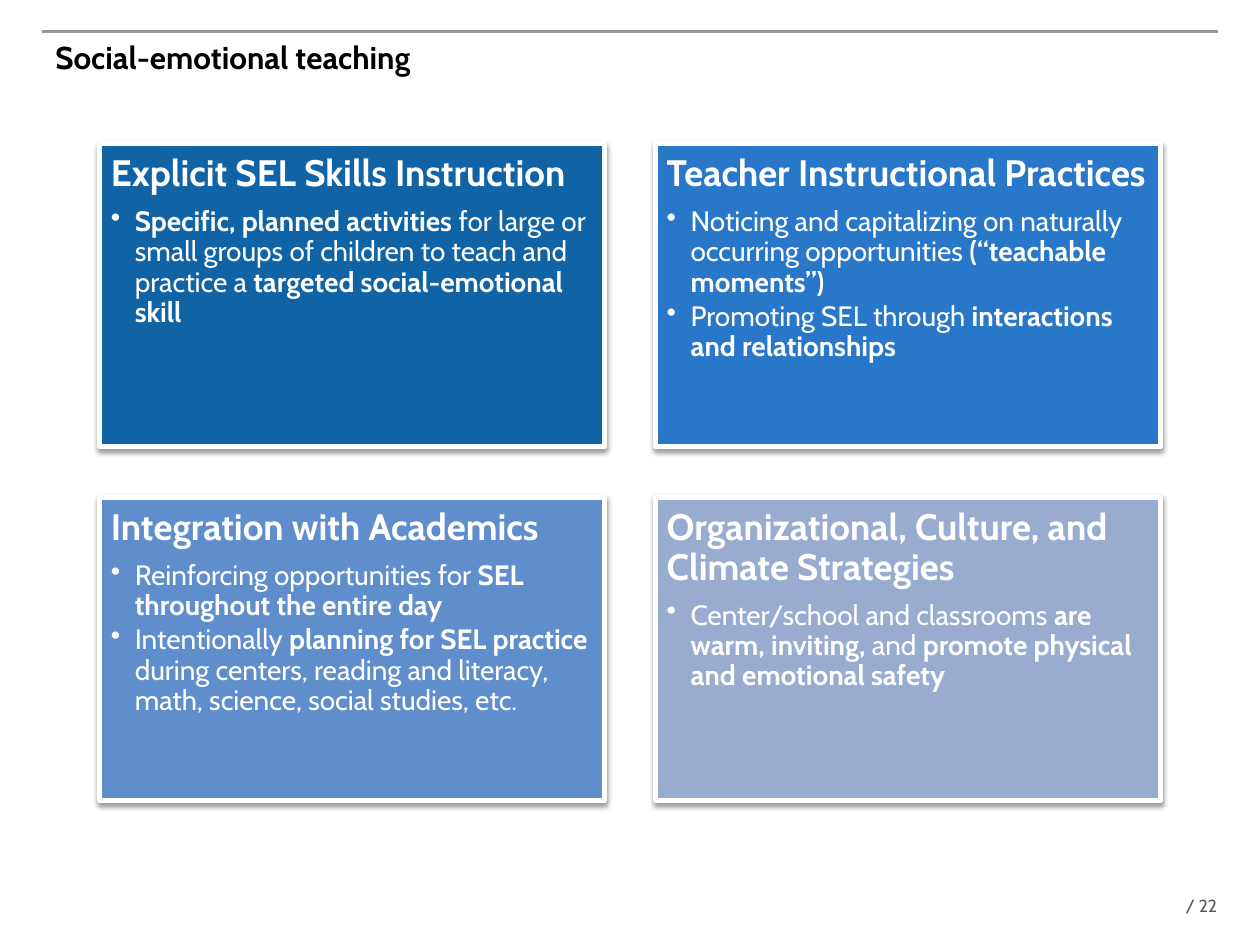
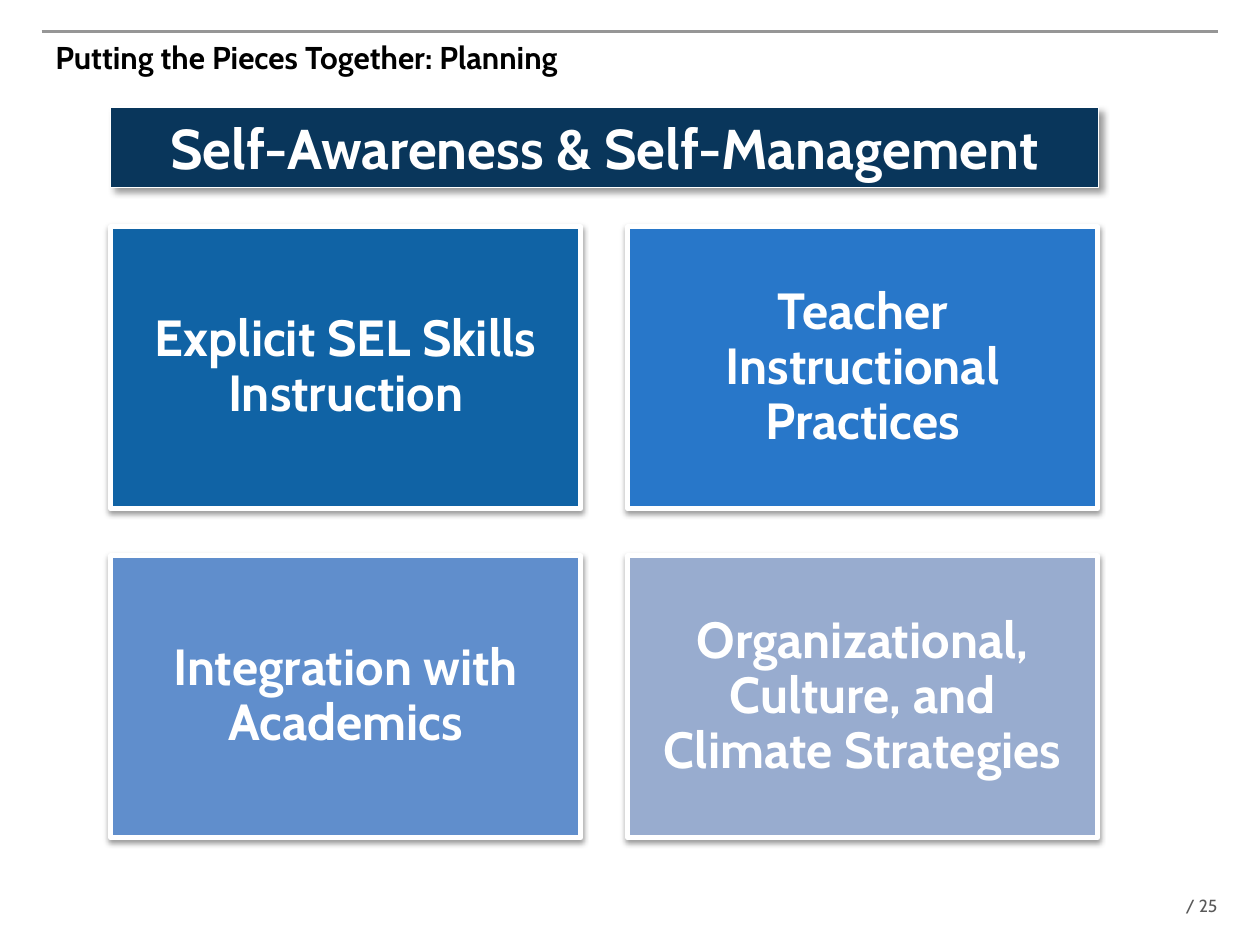
"""Build two slides on social-emotional teaching: four strategies in detail, then as a planning overview."""
from lxml.etree import SubElement
from pptx import Presentation
from pptx.dml.color import RGBColor
from pptx.enum.shapes import MSO_CONNECTOR, MSO_SHAPE
from pptx.enum.text import MSO_ANCHOR as Anchor, PP_ALIGN as Align
from pptx.oxml import parse_xml
from pptx.oxml.ns import nsdecls, qn
from pptx.util import Emu, Inches, Pt

FONT = "Cabin"
WHITE, BLACK, RULE_GRAY, FOOTER_GRAY, NAVY = "FFFFFF", "000000", "969696", "595959", "09365B"
CARD_SHADOW = (38, 3.1, 1.6, 90)
BANNER_SHADOW = (40, 4, 3, 45)
rgb = RGBColor.from_string

STRATEGIES = [
    ("Explicit SEL Skills Instruction", "1063A5", [
        "*Specific, planned activities *for large or small groups of children to teach and "
        "practice a *targeted social-emotional skill*"]),
    ("Teacher Instructional Practices", "2877C9", [
        "Noticing and capitalizing on naturally occurring opportunities *(“teachable moments”)*",
        "Promoting SEL through *interactions and relationships*"]),
    ("Integration with Academics", "608ECC", [
        "Reinforcing opportunities for *SEL throughout the entire day*",
        "Intentionally *planning for SEL practice *during centers, reading and literacy, "
        "math, science, social studies, etc."]),
    ("Organizational, Culture, and Climate Strategies", "98ACCF", [
        "Center/school and classrooms *are warm, inviting,* and "
        "*promote physical and emotional safety*"]),
]

SLIDES = [
    {"title": "Social-emotional teaching", "footer": "/ 22", "banner": None,
     "left": 0.79, "top": 1.14, "width": 4.01, "inset": 0.09, "size": 21,
     "anchor": Anchor.TOP, "align": Align.LEFT, "details": True},
    {"title": "Putting the Pieces Together: Planning", "footer": "/ 25",
     "banner": "Self-Awareness & Self-Management",
     "left": 0.88, "top": 1.8, "width": 3.73, "inset": 0.12, "size": 29,
     "anchor": Anchor.MIDDLE, "align": Align.CENTER, "details": False},
]


def write(paragraph, text, size, color, bold=None):
    """Fill a paragraph; without a given weight, text between asterisks is bold."""
    paragraph.font.name = FONT
    paragraph.font.size = Pt(size)
    paragraph.font.color.rgb = rgb(color)
    paragraph.font.bold = bold
    for index, part in enumerate([text] if bold is not None else text.split("*")):
        if part:
            span = paragraph.add_run()
            span.text = part
            if bold is None:
                span.font.bold = index % 2 == 1


def add_panel(page, left, top, width, height, fill, border, shadow):
    """Add a filled rectangle with a white border and a soft shadow."""
    panel = page.shapes.add_shape(
        MSO_SHAPE.RECTANGLE, Inches(left), Inches(top), Inches(width), Inches(height))
    panel.fill.solid()
    panel.fill.fore_color.rgb = rgb(fill)
    panel.line.color.rgb = rgb(WHITE)
    panel.line.width = Pt(border)
    panel.shadow.inherit = False
    alpha, blur, distance, angle = shadow
    panel._element.spPr.find(qn("a:effectLst")).append(parse_xml(
        f'<a:outerShdw {nsdecls("a")} blurRad="{Pt(blur)}" dist="{Pt(distance)}" '
        f'dir="{angle * 60000}" rotWithShape="0"><a:srgbClr val="{BLACK}">'
        f'<a:alpha val="{alpha * 1000}"/></a:srgbClr></a:outerShdw>'))
    panel.text_frame.word_wrap = True
    return panel


deck = Presentation()
deck.slide_width, deck.slide_height = Inches(10), Inches(7.5)

for content in SLIDES:
    page = deck.slides.add_slide(deck.slide_layouts[6])

    footer = page.shapes.add_textbox(Inches(9.41), Inches(7.1), Inches(0.55), Inches(0.17)).text_frame
    footer.margin_left = footer.margin_right = footer.margin_top = footer.margin_bottom = Emu(0)
    write(footer.paragraphs[0], content["footer"], 10, FOOTER_GRAY, False)

    rule = page.shapes.add_connector(
        MSO_CONNECTOR.STRAIGHT, Inches(0.33), Inches(0.25), Inches(9.67), Inches(0.25))
    rule.line.color.rgb = rgb(RULE_GRAY)
    rule.line.width = Pt(2)
    SubElement(rule._element.spPr, qn("a:effectLst"))

    title = page.shapes.add_textbox(Inches(0.34), Inches(0.25), Inches(9.32), Inches(0.92)).text_frame
    title.word_wrap = True
    write(title.paragraphs[0], content["title"], 18, BLACK, True)

    width, inset = content["width"], content["inset"]
    for index, (heading, fill, details) in enumerate(STRATEGIES):
        row, column = divmod(index, 2)
        card = add_panel(page, content["left"] + column * 1.1 * width,
                         content["top"] + row * 0.7 * width,
                         width, 0.6 * width, fill, 3, CARD_SHADOW)
        box = card.text_frame
        box.margin_left = box.margin_right = box.margin_top = box.margin_bottom = Inches(inset)
        box.vertical_anchor = content["anchor"]
        para = box.paragraphs[0]
        para.alignment = content["align"]
        para.line_spacing = 0.9
        para.space_after = Pt(0.35 * content["size"])
        write(para, heading, content["size"], WHITE, True)
        for detail in details if content["details"] else []:
            para = box.add_paragraph()
            para.alignment = Align.LEFT
            para.line_spacing = 0.9
            para.space_after = Pt(2.4)
            properties = para._p.get_or_add_pPr()
            properties.set("marL", str(Inches(0.19)))
            properties.set("indent", str(-Inches(0.19)))
            SubElement(properties, qn("a:buChar"), char="•")
            write(para, detail, 16, WHITE)

    if content["banner"]:
        banner = add_panel(page, 0.88, 0.85, 7.84, 0.64, NAVY, 0.75, BANNER_SHADOW)
        para = banner.text_frame.paragraphs[0]
        para.alignment = Align.CENTER
        write(para, content["banner"], 32, WHITE, True)

deck.save("out.pptx")
